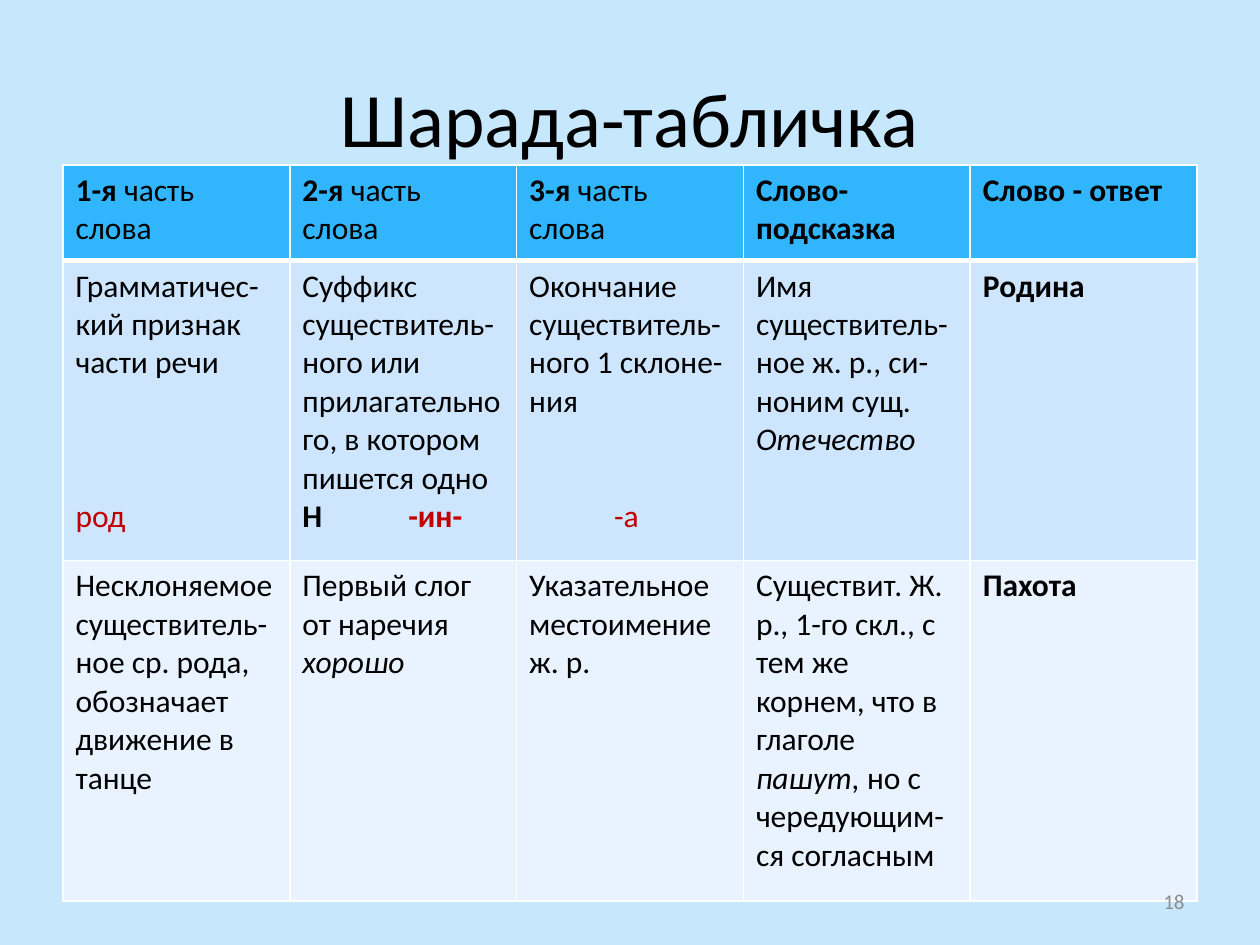
import pptx
import pptx.dml.color
import pptx.enum.text
import pptx.oxml
import pptx.oxml.ns
import pptx.util
from dataclasses import dataclass

Pt = pptx.util.Pt
Align = pptx.enum.text.PP_ALIGN
Anchor = pptx.enum.text.MSO_ANCHOR


@dataclass(frozen=True)
class Theme:
    font: str = "Calibri"
    background: str = "C6E7FC"
    text: str = "000000"
    answer: str = "C00000"
    muted: str = "8C8C8C"
    border: str = "FFFFFF"
    row_fills: tuple = ("31B6FD", "CEE5FE", "E8F3FF")
    title_size: int = 44
    body_size: int = 18
    number_size: int = 12


THEME = Theme()
LINE = 22  # height of one line of body text
COLUMN_WIDTH = 129.6
ROW_HEIGHTS = (54.72, 171.36, 194.4)


@dataclass(frozen=True)
class Para:
    """Runs are (text, style); in a style b is bold, i italic, a answer."""
    runs: tuple
    before: float = 0
    tab: float = 0


def line(*runs, before=0, tab=0):
    return Para(runs, before, tab)


ROWS = [
    [  # header
        [line(("1-я", "b"), (" часть слова", ""))],
        [line(("2-я", "b"), (" часть слова", ""))],
        [line(("3-я ", "b"), ("часть слова", ""))],
        [line(("Слово-подсказка", "b"))],
        [line(("Слово - ответ", "b"))],
    ],
    [  # first charade
        [line(("Грамматичес-кий признак части речи", "")),
         line(("род", "a"), before=3 * LINE)],
        [line(("Суффикс существитель-ного или прилагательного, "
               "в котором пишется одно ", ""),
              ("Н\t", "b"), ("-ин-", "ba"), tab=60.5)],
        [line(("Окончание существитель-ного 1 склоне-ния", "")),
         line(("\t", ""), ("-а", "a"), before=2 * LINE, tab=48.5)],
        [line(("Имя существитель-ное ж. р., си-ноним сущ. ", ""),
              ("Отечество", "i"))],
        [line(("Родина", "b"))],
    ],
    [  # second charade
        [line(("Несклоняемое существитель-", "")),
         line(("ное ср. рода, обозначает движение в танце", ""))],
        [line(("Первый слог от наречия ", ""), ("хорошо", "i"))],
        [line(("Указательное местоимение ж. р.", ""))],
        [line(("Существит. Ж. р., 1-го скл., с тем же корнем, "
               "что в глаголе ", ""),
              ("пашут, ", "i"), ("но с чередующим-", "")),
         line(("ся согласным", ""))],
        [line(("Пахота", "b"))],
    ],
]


def rgb(value):
    return pptx.dml.color.RGBColor.from_string(value)


def format_run(run, size, color, style=""):
    run.font.name = THEME.font
    run.font.size = Pt(size)
    run.font.color.rgb = rgb(color)
    run.font.bold = "b" in style
    run.font.italic = "i" in style


def add_label(slide, text, box, size, color, align):
    frame = slide.shapes.add_textbox(*map(Pt, box)).text_frame
    frame.word_wrap = True
    frame.vertical_anchor = Anchor.MIDDLE
    frame.text = text
    frame.paragraphs[0].alignment = align
    format_run(frame.paragraphs[0].runs[0], size, color)


def add_tab_stop(paragraph, position):
    paragraph._p.get_or_add_pPr().append(pptx.oxml.parse_xml(
        f'<a:tabLst {pptx.oxml.ns.nsdecls("a")}>'
        f'<a:tab pos="{int(Pt(position))}" algn="l"/></a:tabLst>'))


def set_borders(cell, top, bottom):
    properties = cell._tc.get_or_add_tcPr()
    widths = {"lnL": 1, "lnR": 1, "lnT": top, "lnB": bottom}
    for index, (side, width) in enumerate(widths.items()):
        properties.insert(index, pptx.oxml.parse_xml(
            f'<a:{side} {pptx.oxml.ns.nsdecls("a")} w="{int(Pt(width))}">'
            f'<a:solidFill><a:srgbClr val="{THEME.border}"/></a:solidFill>'
            f'</a:{side}>'))


def fill_cell(cell, paras, fill):
    cell.fill.solid()
    cell.fill.fore_color.rgb = rgb(fill)
    frame = cell.text_frame
    for index, para in enumerate(paras):
        paragraph = frame.add_paragraph() if index else frame.paragraphs[0]
        if para.tab:
            add_tab_stop(paragraph, para.tab)
        if para.before:
            paragraph.space_before = Pt(para.before)
        for text, style in para.runs:
            run = paragraph.add_run()
            run.text = text
            color = THEME.answer if "a" in style else THEME.text
            format_run(run, THEME.body_size, color, style)


def add_charade_table(slide):
    columns = len(ROWS[0])
    charades = slide.shapes.add_table(
        len(ROWS), columns, Pt(36), Pt(94.32),
        Pt(columns * COLUMN_WIDTH), Pt(sum(ROW_HEIGHTS))).table
    charades.horz_banding = False
    for column in charades.columns:
        column.width = Pt(COLUMN_WIDTH)
    for r, (height, cells) in enumerate(zip(ROW_HEIGHTS, ROWS)):
        charades.rows[r].height = Pt(height)
        for c, paras in enumerate(cells):
            cell = charades.cell(r, c)
            fill_cell(cell, paras, THEME.row_fills[r])
            # A thicker rule separates the header from the charades
            set_borders(cell, 3 if r == 1 else 1, 3 if r == 0 else 1)


def main():
    deck = pptx.Presentation()
    deck.slide_width, deck.slide_height = Pt(720), Pt(540)
    slide = deck.slides.add_slide(deck.slide_layouts[6])
    slide.background.fill.solid()
    slide.background.fill.fore_color.rgb = rgb(THEME.background)

    # Title
    add_label(slide, "Шарада-табличка", (36, 21.6, 648, 90),
              THEME.title_size, THEME.text, Align.CENTER)
    # Charades
    add_charade_table(slide)
    # Slide number
    add_label(slide, "18", (516, 500.5, 168, 28.75),
              THEME.number_size, THEME.muted, Align.RIGHT)

    deck.save("out.pptx")


if __name__ == "__main__":
    main()
